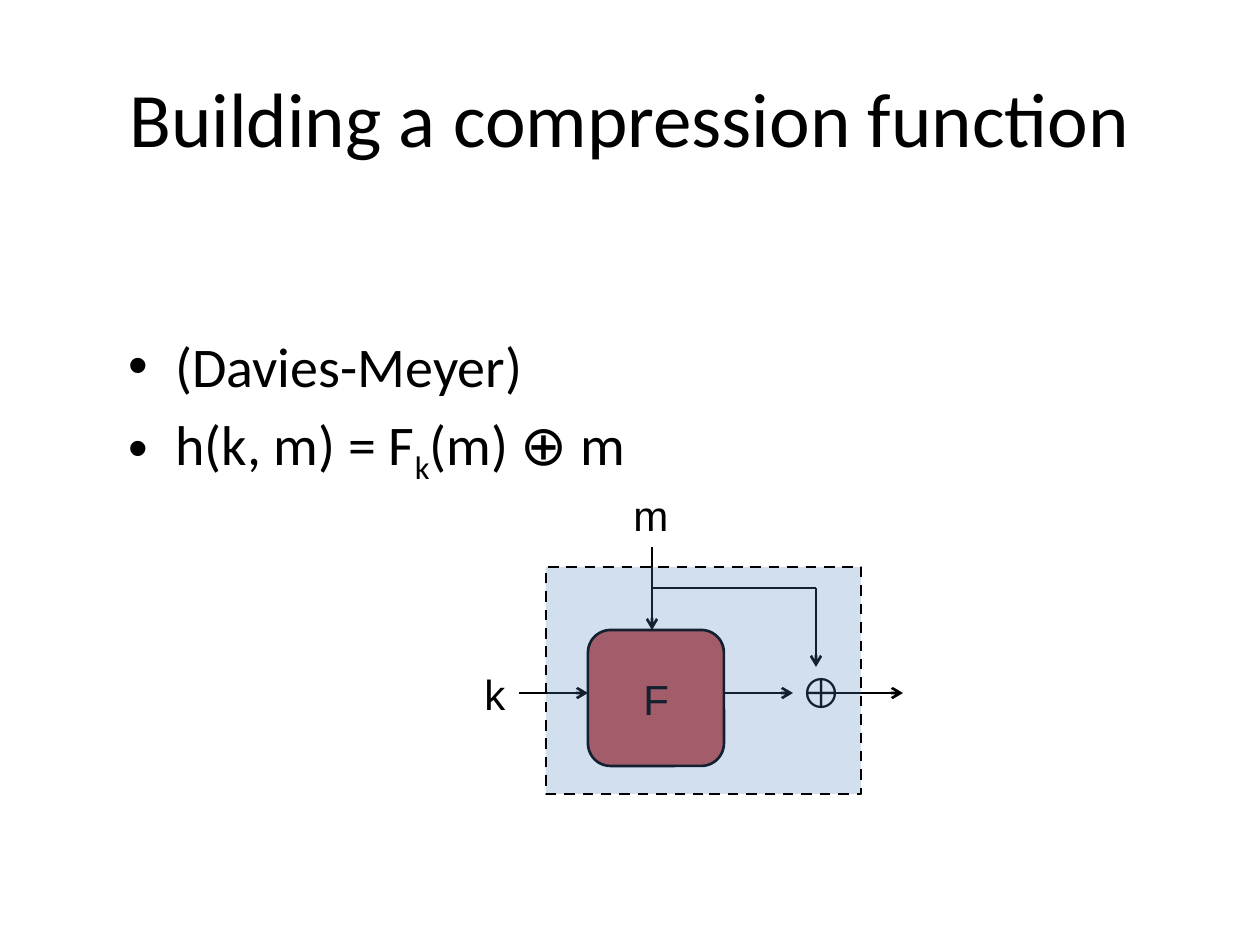
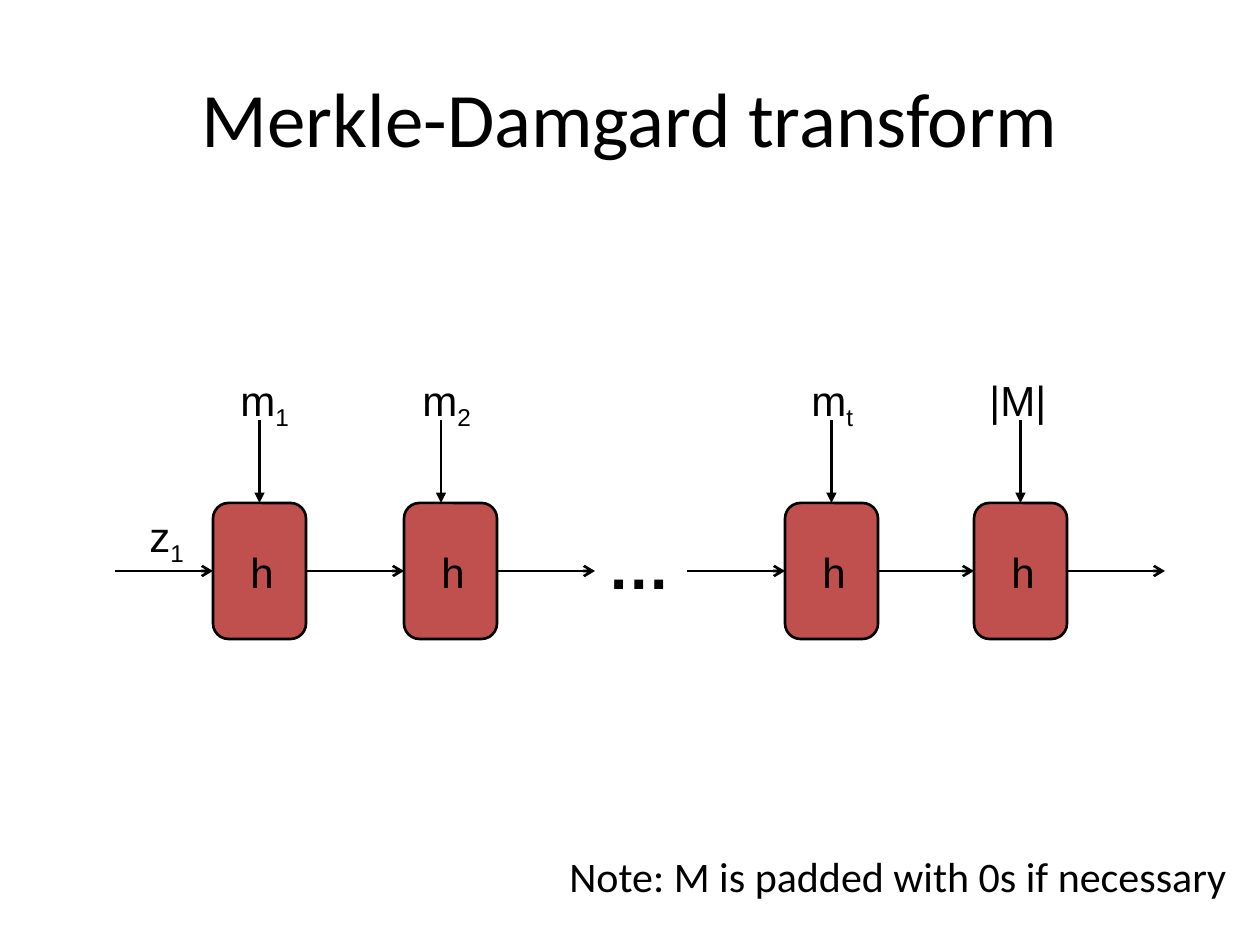
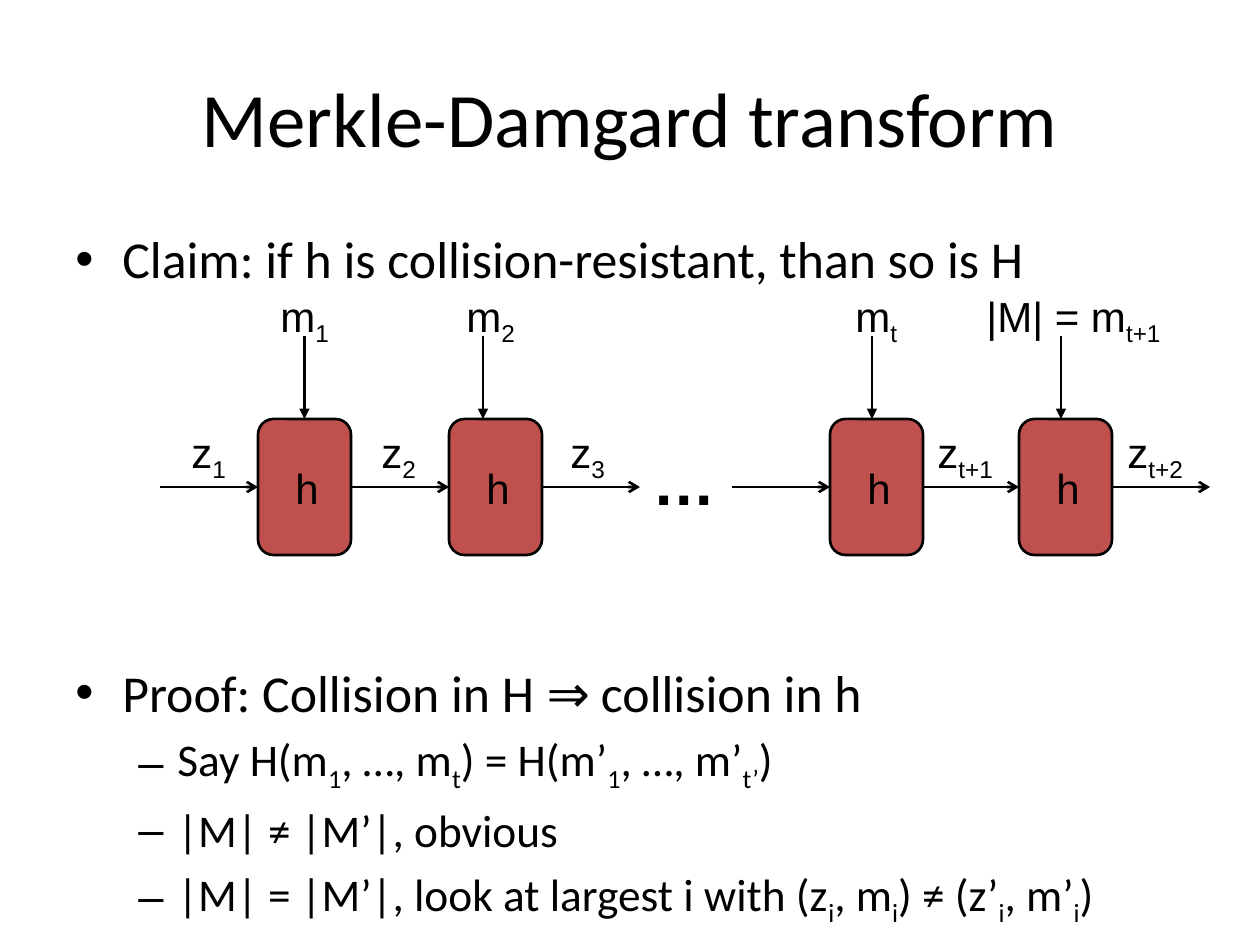
from lxml import etree
from pptx import Presentation
from pptx.dml.color import RGBColor
from pptx.enum.dml import MSO_LINE
from pptx.enum.shapes import MSO_CONNECTOR, MSO_SHAPE
from pptx.enum.text import MSO_ANCHOR, PP_ALIGN
from pptx.oxml.ns import qn
from pptx.util import Pt

EMU_PER_PX = 914400 / 126
BLACK, RED, BLUE = "000000", "C0504D", "4F81BD"
SANS, BODY = "Arial", "Calibri"
STRAIGHT = MSO_CONNECTOR.STRAIGHT
RECT, ROUNDED = MSO_SHAPE.RECTANGLE, MSO_SHAPE.ROUNDED_RECTANGLE
TOP, MIDDLE = MSO_ANCHOR.TOP, MSO_ANCHOR.MIDDLE
LEFT, CENTER = PP_ALIGN.LEFT, PP_ALIGN.CENTER
DASH = MSO_LINE.DASH
SIDE_TOP, SIDE_LEFT, SIDE_RIGHT = 0, 1, 3

# Bullet levels: character, left margin and hanging indent in px
LEVELS = [("•", 47, 47), ("–", 102, 39)]


def px(length):
    return round(length * EMU_PER_PX)


def color(hex_string):
    return RGBColor.from_string(hex_string)


def add_runs(paragraph, text, size, font, bold=False):
    """Add runs; the parts between tildes are subscripts."""
    for i, part in enumerate(text.split("~")):
        if not part:
            continue
        run = paragraph.add_run()
        run.text = part
        run.font.size, run.font.name, run.font.bold = Pt(size), font, bold
        run.font.color.rgb = color(BLACK)
        if i % 2:
            run._r.get_or_add_rPr().set("baseline", "-25000")


class Deck:
    def __init__(self):
        self.prs = Presentation()
        self.prs.slide_width, self.prs.slide_height = px(1260), px(945)
        self.slide = None

    def new_slide(self, title):
        self.slide = self.prs.slides.add_slide(self.prs.slide_layouts[6])
        self.text(title, 63, 38, 1134, 158, size=44, font=BODY,
                  align=CENTER, anchor=MIDDLE, wrap=True)

    def text(self, text, x, y, w, h=64, size=24, font=SANS, bold=False,
             align=LEFT, anchor=TOP, wrap=False):
        frame = self.slide.shapes.add_textbox(px(x), px(y), px(w), px(h)).text_frame
        frame.word_wrap = wrap
        frame.vertical_anchor = anchor
        paragraph = frame.paragraphs[0]
        paragraph.alignment = align
        add_runs(paragraph, text, size, font, bold)

    def bullets(self, items, x, y, w, h):
        """Each item is text, level, size and space before in points."""
        frame = self.slide.shapes.add_textbox(px(x), px(y), px(w), px(h)).text_frame
        frame.word_wrap = True
        for i, (text, level, size, before) in enumerate(items):
            paragraph = frame.add_paragraph() if i else frame.paragraphs[0]
            char, margin, hang = LEVELS[level]
            paragraph.level = level
            paragraph.space_before = Pt(before)
            props = paragraph._p.get_or_add_pPr()
            props.set("marL", str(px(margin)))
            props.set("indent", str(-px(hang)))
            etree.SubElement(props, qn("a:buFont")).set("typeface", SANS)
            etree.SubElement(props, qn("a:buChar")).set("char", char)
            add_runs(paragraph, text, size, BODY)

    def box(self, x, y, w, h, fill, kind=ROUNDED, alpha=None, dash=None):
        shape = self.slide.shapes.add_shape(kind, px(x), px(y), px(w), px(h))
        shape.shadow.inherit = False
        shape.fill.solid()
        shape.fill.fore_color.rgb = color(fill)
        shape.line.color.rgb = color(BLACK)
        shape.line.width = Pt(1.5)
        if dash:
            shape.line.dash_style = dash
        if alpha:
            tint = shape._element.spPr.find(qn("a:solidFill"))[0]
            etree.SubElement(tint, qn("a:alpha")).set("val", str(alpha * 1000))
        return shape

    def line(self, x1, y1, x2, y2, head="arrow", start=None, end=None):
        """Draw a line; start and end are optional (shape, side) joins."""
        link = self.slide.shapes.add_connector(STRAIGHT, px(x1), px(y1), px(x2), px(y2))
        link.line.color.rgb = color(BLACK)
        link.line.width = Pt(1.5)
        if head:
            etree.SubElement(link.line._get_or_add_ln(), qn("a:tailEnd")).set("type", head)
        etree.SubElement(link._element.spPr, qn("a:effectLst"))
        if start:
            link.begin_connect(*start)
        if end:
            link.end_connect(*end)

    def hash_chain(self, dx, dy, messages, states):
        """Chain of h boxes; messages are (text, left, width, arrow x),
        states are (text, left, width)."""
        width, height, top, step = 93, 136, 503 + dy, 98
        middle = top + height / 2
        lefts = [dx + left for left in (213, 404, 785, 974)]
        blocks = []
        for left in lefts:
            blocks.append(self.box(left, top, width, height, RED))
            self.text("h", left + 25, top + 37, 49)
        self.text("…", 595 + dx, 520 + dy, 89, 89, size=36, bold=True)

        # State arrows
        first, second, before_last, last = blocks
        for block, left in ((first, lefts[0]), (before_last, lefts[2])):
            self.line(left - step, middle, left, middle, end=(block, SIDE_LEFT))
        for a, b, left in ((first, second, lefts[1]), (before_last, last, lefts[3])):
            self.line(left - step, middle, left, middle,
                      start=(a, SIDE_RIGHT), end=(b, SIDE_LEFT))
        for block, left in ((second, lefts[1]), (last, lefts[3])):
            right = left + width
            self.line(right, middle, right + step, middle, start=(block, SIDE_RIGHT))

        # Message arrows, joined where they meet the middle of a box
        for block, left, (label, label_x, label_w, arrow_x) in zip(blocks, lefts, messages):
            self.text(label, label_x, 368 + dy, label_w)
            center, join = left + width / 2, None
            if abs(arrow_x - center) <= 3:
                arrow_x, join = center, (block, SIDE_TOP)
            self.line(arrow_x, 420 + dy, arrow_x, top, head="triangle", end=join)
        for label, label_x, label_w in states:
            self.text(label, label_x, 504 + dy, label_w)


def compression_slide(deck):
    deck.new_slide("Building a compression function")
    deck.bullets([("(Davies-Meyer)", 0, 32, 0),
                  ("h(k, m) = F~k~(m) ⊕ m", 0, 32, 6.4)], 116, 325, 1060, 158)
    deck.box(588, 630, 136, 136, RED)
    for label, x, y, w in (("F", 631, 667, 52), ("k", 472, 662, 47),
                           ("m", 621, 483, 60), ("⊕", 788, 660, 58)):
        deck.text(label, x, y, w)
    # Wiring
    flow_y, branch_y, m_x, xor_x = 693, 588, 652, 816
    deck.line(m_x, 547, m_x, 630)
    for x in (519, 724, 834):
        deck.line(x, flow_y, x + 69, flow_y)
    deck.line(m_x, branch_y, xor_x, branch_y, head=None)
    deck.line(xor_x, branch_y, xor_x, 667)
    # Boundary of h
    deck.box(546, 567, 315, 227, BLUE, kind=RECT, alpha=25, dash=DASH)


def transform_slide(deck):
    deck.new_slide("Merkle-Damgard transform")
    deck.hash_chain(0, 0,
                    [("m~1~", 228, 77, 260), ("m~2~", 410, 77, 441),
                     ("m~t~", 799, 69, 829), ("|M|", 977, 83, 1018)],
                    [("z~1~", 137, 62)])
    deck.text("Note: M is padded with 0s if necessary", 557, 844, 688, font=BODY)


def proof_slide(deck):
    deck.new_slide("Merkle-Damgard transform")
    deck.bullets([
        ("Claim: if h is collision-resistant, than so is H", 0, 29.6, 0),
        ("Proof: Collision in H ⇒ collision in h", 0, 29.6, 212),
        ("Say H(m~1~, …, m~t~) = H(m’~1~, …, m’~t’~)", 1, 25.9, 5.2),
        ("|M| ≠ |M’|, obvious", 1, 25.9, 5.2),
        ("|M| = |M’|, look at largest i with (z~i~, m~i~) ≠ (z’~i~, m’~i~)", 1, 25.9, 5.2),
    ], 63, 221, 1134, 624)
    deck.hash_chain(45, -84,
                    [("m~1~", 268, 77, 305), ("m~2~", 454, 77, 483),
                     ("m~t~", 843, 69, 872), ("|M| = m~t+1~", 974, 207, 1061)],
                    [("z~1~", 179, 62), ("z~2~", 369, 62), ("z~3~", 558, 62),
                     ("z~t+1~", 925, 87), ("z~t+2~", 1115, 87)])


def main():
    deck = Deck()
    compression_slide(deck)
    transform_slide(deck)
    proof_slide(deck)
    deck.prs.save("out.pptx")


if __name__ == "__main__":
    main()
